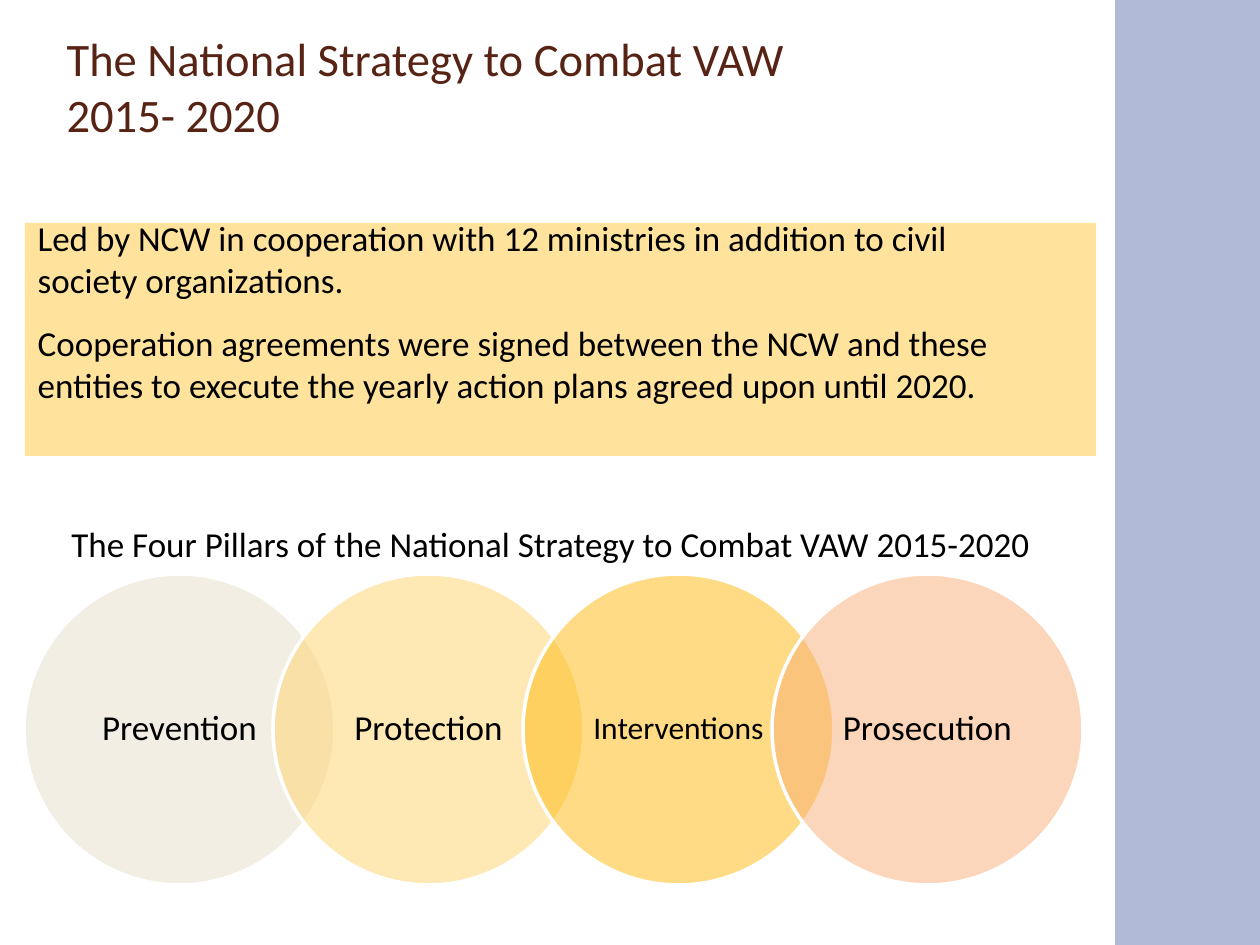
from lxml.etree import SubElement
from pptx import Presentation
from pptx.dml.color import RGBColor
from pptx.enum.shapes import MSO_SHAPE
from pptx.enum.text import MSO_ANCHOR, MSO_AUTO_SIZE, PP_ALIGN
from pptx.oxml.ns import qn
from pptx.util import Pt

PX = 914400 / 126


def box(*sides):
    """Turn px lengths into EMU."""
    return [round(side * PX) for side in sides]


def paint(color, value):
    """Set a fill or font colour from a hex string."""
    color.rgb = RGBColor.from_string(value)


deck = Presentation()
deck.slide_width, deck.slide_height = box(1260, 945)
slide = deck.slides.add_slide(deck.slide_layouts[1])
shapes = slide.shapes
title, body = shapes.title, slide.placeholders[1]

# Backdrop: side strip, white panel and banner, behind the placeholders
back = slide.background.fill
back.solid()
paint(back.fore_color, "B0BAD7")
panels = [((0, 0, 1115, 945), "FFFFFF"), ((25, 223, 1071, 233), "FFE39D")]
for level, (place, color) in enumerate(panels):
    panel = shapes.add_shape(MSO_SHAPE.RECTANGLE, *box(*place))
    panel.shadow.inherit = False
    panel.fill.solid()
    paint(panel.fill.fore_color, color)
    panel.line.fill.background()
    title.element.getparent().insert(2 + level, panel.element)

# Title, body and heading
head = shapes.add_textbox(*box(59, 516, 1008, 55))
texts = [
    (title, (54, 38, 1033, 110), MSO_ANCHOR.BOTTOM, 26.6, "572314", 0, [
        "The National Strategy to Combat VAW",
        "2015- 2020"]),
    (body, (25, 210, 982, 246), MSO_ANCHOR.TOP, 20, "000000", 6, [
        "Led by NCW in cooperation with 12 ministries in addition to civil "
        "society organizations.",
        "Cooperation agreements were signed between the NCW and these "
        "entities to execute the yearly action plans agreed upon until 2020."]),
    (head, (59, 516, 1008, 55), MSO_ANCHOR.TOP, 20, "000000", 0, [
        "The Four Pillars of the National Strategy to Combat VAW 2015-2020"]),
]
for shape, place, anchor, size, color, gap, lines in texts:
    shape.left, shape.top, shape.width, shape.height = box(*place)
    frame = shape.text_frame
    frame.word_wrap = True
    frame.auto_size = MSO_AUTO_SIZE.NONE
    frame.vertical_anchor = anchor
    for row, line in enumerate(lines):
        para = frame.add_paragraph() if row else frame.paragraphs[0]
        if shape is body:
            props = para._p.get_or_add_pPr()
            props.set("marL", "0")
            props.set("indent", "0")
            SubElement(props, qn("a:buNone"))
        para.alignment = PP_ALIGN.LEFT
        para.space_before = Pt(gap if row else 0)
        para.space_after = Pt(gap)
        run = para.add_run()
        run.text = line
        run.font.name, run.font.size = "Calibri", Pt(size)
        paint(run.font.color, color)

# Four overlapping pillars
pillars = [
    ("Prevention", "E7DEC9", 20),
    ("Protection", "FED46C", 20),
    ("Interventions", "FEB80A", 18),
    ("Prosecution", "FAAE76", 20),
]
for spot, (name, color, size) in enumerate(pillars):
    disc = shapes.add_shape(
        MSO_SHAPE.OVAL, *box(24 + spot * 499 // 2, 574, 311, 311))
    disc.shadow.inherit = False
    disc.fill.solid()
    paint(disc.fill.fore_color, color)
    tint = disc.element.spPr.find(qn("a:solidFill"))[0]
    SubElement(tint, qn("a:alpha")).set("val", "50000")
    paint(disc.line.color, "FFFFFF")
    disc.line.width = Pt(2)
    frame = disc.text_frame
    frame.word_wrap = True
    frame.vertical_anchor = MSO_ANCHOR.MIDDLE
    frame.margin_left, frame.margin_right = box(18, 18)
    frame.margin_top, frame.margin_bottom = box(4, 4)
    para = frame.paragraphs[0]
    para.alignment = PP_ALIGN.CENTER
    para.line_spacing = 0.9
    run = para.add_run()
    run.text = name
    run.font.name, run.font.size = "Calibri", Pt(size)
    paint(run.font.color, "000000")

deck.save("out.pptx")
